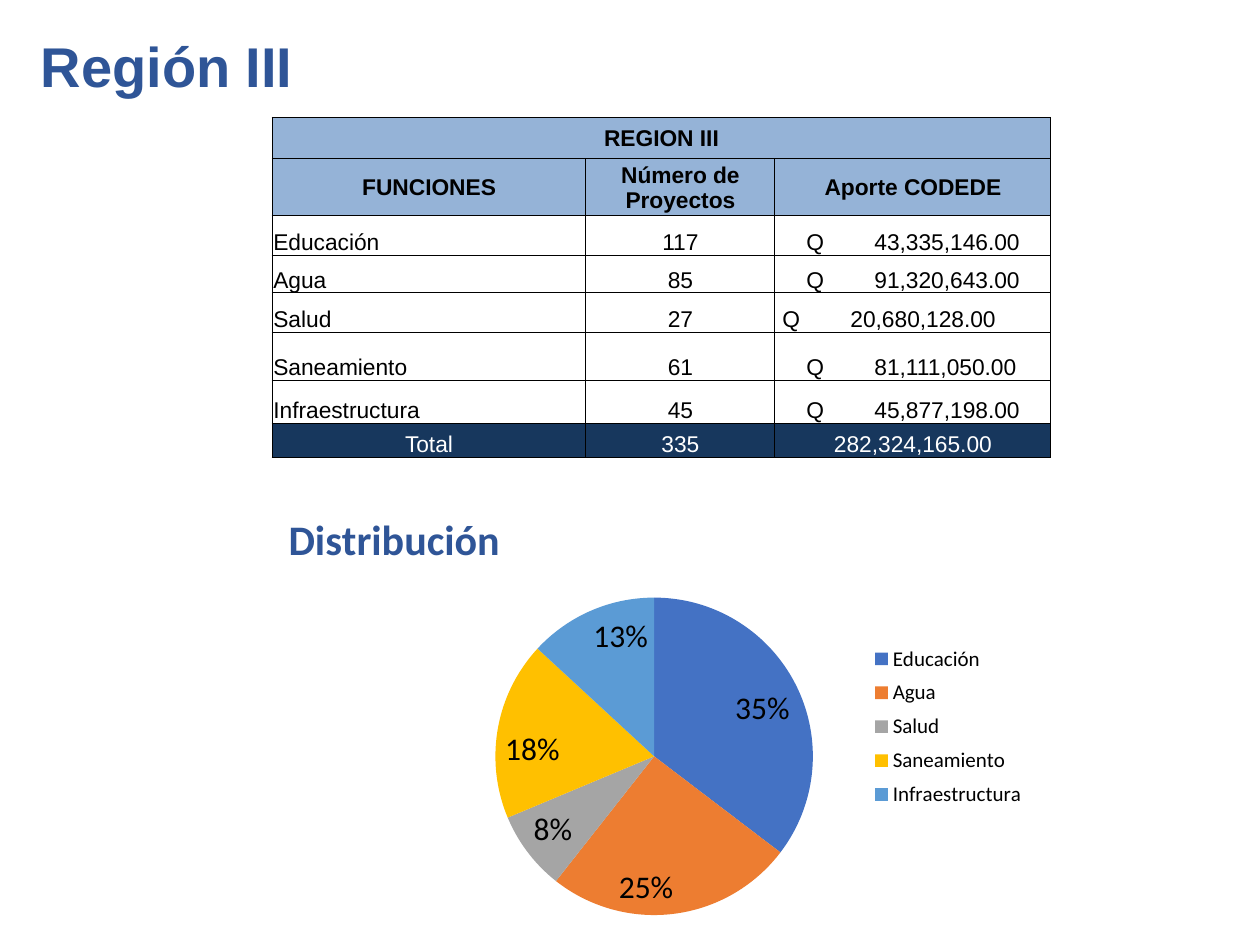
import pptx
import pptx.chart.data
import pptx.dml.color
import pptx.enum.chart
import pptx.enum.text
import pptx.oxml
import pptx.oxml.ns
import pptx.util

ALIGN = pptx.enum.text.PP_ALIGN
ANCHOR = pptx.enum.text.MSO_ANCHOR
NAMESPACES = pptx.oxml.ns.nsdecls("a", "c")

COLORS = {
    "heading": "2F5597", "text": "000000", "white": "FFFFFF",
    "header": "95B3D7", "total": "17375D", "border": "000000",
}
SLICE_COLORS = {
    "Educación": "4472C4", "Agua": "ED7D31", "Salud": "A5A5A5",
    "Saneamiento": "FFC000", "Infraestructura": "5B9BD5",
}
PERCENTS = [35, 25, 8, 18, 13]
PROJECTS = [117, 85, 27, 61, 45]
AMOUNTS = ["43,335,146.00", "91,320,643.00", "20,680,128.00",
           "81,111,050.00", "45,877,198.00"]

WIDTH, HEIGHT = pptx.util.Inches(10), pptx.util.Inches(7.5)
COLUMN_WEIGHTS = [249, 150, 219]
ROW_WEIGHTS = [33, 45, 31, 30, 31, 38, 34, 27]
AMOUNT_INDENT, SALUD_INDENT, AMOUNT_TAB = 0.25, 0.06, 0.54


def rgb(name):
    return pptx.dml.color.RGBColor.from_string(COLORS.get(name, name))


def slide_box(left, top, width, height):
    """Turn shares of the slide into a box of lengths."""
    return (round(left * WIDTH), round(top * HEIGHT),
            round(width * WIDTH), round(height * HEIGHT))


def format_font(font, color, **values):
    for name, value in values.items():
        setattr(font, name, pptx.util.Pt(value) if name == "size" else value)
    font.color.rgb = rgb(color)


def add_heading(slide, box):
    frame = slide.shapes.add_textbox(*box).text_frame
    frame.word_wrap = True
    paragraph = frame.paragraphs[0]
    paragraph.text = "Región III"
    paragraph.alignment = ALIGN.CENTER
    format_font(paragraph.runs[0].font, "heading", size=32, name="Arial", bold=True)


def add_borders(cell):
    properties = cell._tc.get_or_add_tcPr()
    for side in "LRTB":
        properties.append(pptx.oxml.parse_xml(
            f'<a:ln{side} {NAMESPACES} w="6350"><a:solidFill>'
            f'<a:srgbClr val="{COLORS["border"]}"/></a:solidFill></a:ln{side}>'))


def add_tab_stop(paragraph, inches):
    paragraph._p.get_or_add_pPr().append(pptx.oxml.parse_xml(
        f'<a:tabLst {NAMESPACES}><a:tab pos="{pptx.util.Inches(inches)}" algn="l"/></a:tabLst>'))


def fill_cell(cell, text, fill=None, color="text", bold=False,
              align=ALIGN.CENTER, anchor=ANCHOR.BOTTOM, indent=0.01):
    margins = {"margin_left": indent, "margin_right": 0.01,
               "margin_top": 0.01, "margin_bottom": 0}
    for name, inches in margins.items():
        setattr(cell, name, pptx.util.Inches(inches))
    cell.vertical_anchor = anchor
    add_borders(cell)
    if fill:
        cell.fill.solid()
        cell.fill.fore_color.rgb = rgb(fill)
    else:
        cell.fill.background()
    paragraph = cell.text_frame.paragraphs[0]
    paragraph.alignment = align
    if "\t" in text:
        add_tab_stop(paragraph, AMOUNT_TAB)
    if text:
        run = paragraph.add_run()
        run.text = text
        format_font(run.font, color, size=13, name="Arial", bold=bold)


def add_region_table(slide, box):
    width, height = box[2:]
    table = slide.shapes.add_table(len(ROW_WEIGHTS), len(COLUMN_WEIGHTS), *box).table
    table.first_row = table.horz_banding = False
    for column, weight in zip(table.columns, COLUMN_WEIGHTS):
        column.width = round(width * weight / sum(COLUMN_WEIGHTS))
    for row, weight in zip(table.rows, ROW_WEIGHTS):
        row.height = round(height * weight / sum(ROW_WEIGHTS))

    header = {"fill": "header", "bold": True, "anchor": ANCHOR.MIDDLE}
    total = {"fill": "total", "color": "white"}
    banded_rows = {
        0: (["REGION III", "", ""], header),
        1: (["FUNCIONES", "Número de Proyectos", "Aporte CODEDE"], header),
        len(ROW_WEIGHTS) - 1: (["Total", str(sum(PROJECTS)), "282,324,165.00"], total),
    }
    for row, (texts, style) in banded_rows.items():
        for column, text in enumerate(texts):
            fill_cell(table.cell(row, column), text, **style)
    table.cell(0, 0).merge(table.cell(0, 2))

    for row, (name, count, amount) in enumerate(zip(SLICE_COLORS, PROJECTS, AMOUNTS), 2):
        indent = SALUD_INDENT if name == "Salud" else AMOUNT_INDENT
        fill_cell(table.cell(row, 0), name, align=ALIGN.LEFT)
        fill_cell(table.cell(row, 1), str(count))
        fill_cell(table.cell(row, 2), f"Q\t{amount}", align=ALIGN.LEFT, indent=indent)


def set_layout(element, position, **shares):
    """Place a chart part by shares of the chart area."""
    for old in element.findall(pptx.oxml.ns.qn("c:layout")):
        element.remove(old)
    target = '<c:layoutTarget val="inner"/>' if position == 0 else ""
    modes = "".join(f'<c:{axis}Mode val="edge"/>' for axis in "xy")
    values = "".join(f'<c:{name} val="{share}"/>' for name, share in shares.items())
    element.insert(position, pptx.oxml.parse_xml(
        f"<c:layout {NAMESPACES}><c:manualLayout>{target}{modes}{values}"
        "</c:manualLayout></c:layout>"))


def add_distribution_chart(slide, box):
    data = pptx.chart.data.CategoryChartData()
    data.categories = list(SLICE_COLORS)
    data.add_series("Series 1", PERCENTS)
    chart = slide.shapes.add_chart(
        pptx.enum.chart.XL_CHART_TYPE.PIE, *box, data).chart
    format_font(chart.font, "text", size=18, name="Calibri")

    chart.has_title = True
    title = chart.chart_title
    title.text_frame.text = "Distribución"
    format_font(title.text_frame.paragraphs[0].runs[0].font, "heading",
                size=24, name="Calibri", bold=True)
    set_layout(title._element, 1, x=0.01, y=0.11)

    chart.has_legend = True
    legend = chart.legend
    legend.position = pptx.enum.chart.XL_LEGEND_POSITION.RIGHT
    legend.include_in_layout = False
    format_font(legend.font, "text", size=12, name="Calibri")
    set_layout(legend._element, 1, x=0.68, y=0.38, w=0.18, h=0.36)

    plot = chart.plots[0]
    plot.vary_by_categories = True
    set_layout(plot._element.getparent(), 0, x=0.25, y=0.3, w=0.37, h=0.64)
    for index, color in enumerate(SLICE_COLORS.values()):
        fill = plot.series[0].points[index].format.fill
        fill.solid()
        fill.fore_color.rgb = rgb(color)
    plot.has_data_labels = True
    labels = plot.data_labels
    label_format = {
        "show_percentage": True, "show_value": False, "number_format": "0%",
        "number_format_is_linked": False,
        "position": pptx.enum.chart.XL_LABEL_POSITION.INSIDE_END,
    }
    for name, value in label_format.items():
        setattr(labels, name, value)
    format_font(labels.font, "text", size=18, name="Calibri")


def main():
    presentation = pptx.Presentation()
    presentation.slide_width, presentation.slide_height = WIDTH, HEIGHT
    slide = presentation.slides.add_slide(presentation.slide_layouts[6])
    add_region_table(slide, slide_box(0.216, 0.124, 0.618, 0.36))
    add_heading(slide, slide_box(-0.049, 0.027, 0.363, 0.077))
    add_distribution_chart(slide, slide_box(0.216, 0.475, 0.697, 0.525))
    presentation.save("out.pptx")


if __name__ == "__main__":
    main()
